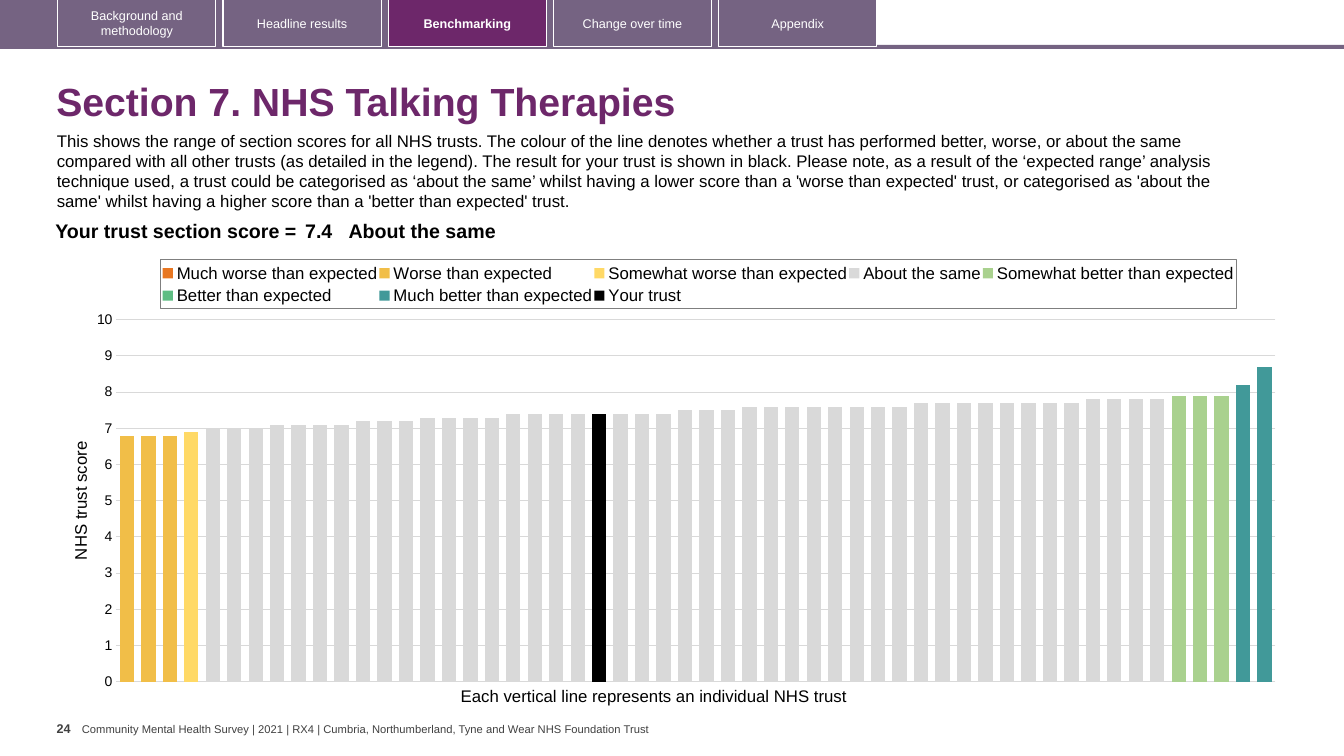
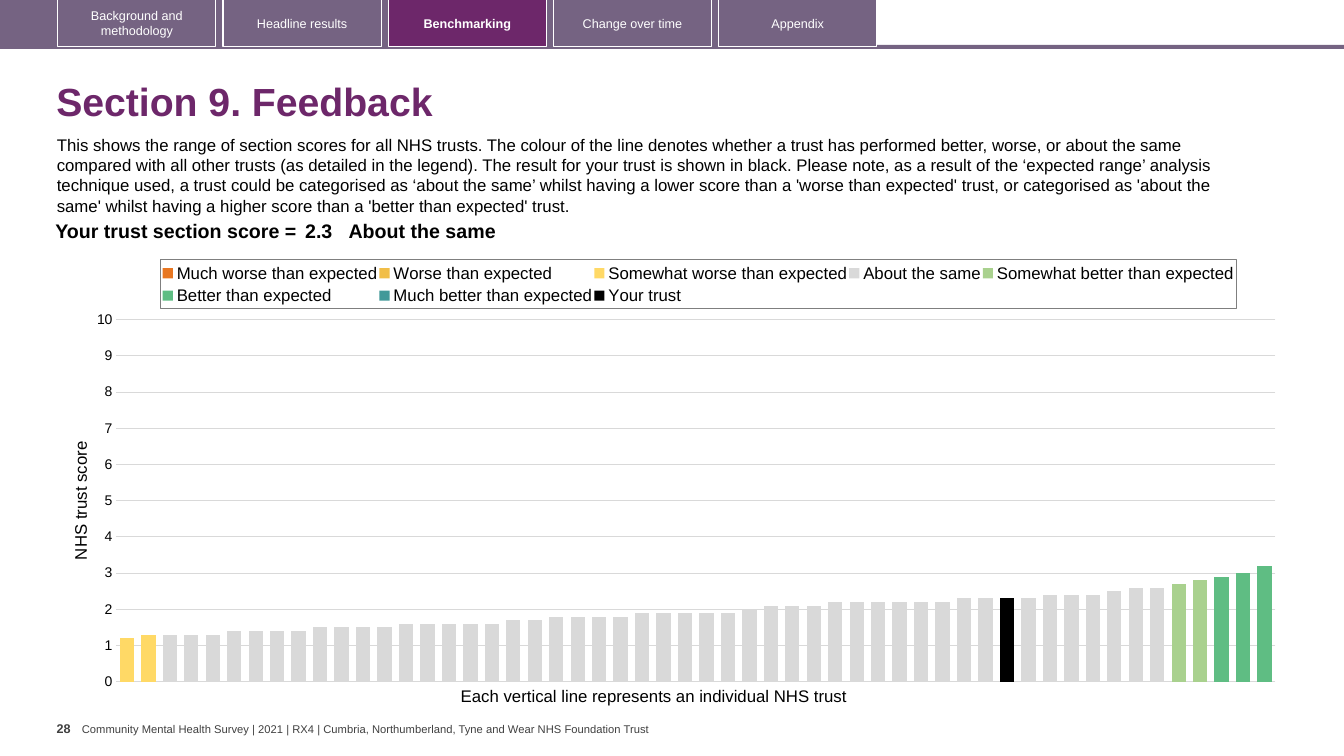
from copy import deepcopy
from dataclasses import dataclass

from pptx import Presentation
from pptx.chart.data import CategoryChartData
from pptx.dml.color import RGBColor
from pptx.enum.chart import XL_CHART_TYPE as Kind
from pptx.enum.chart import XL_LEGEND_POSITION as Place
from pptx.enum.chart import XL_TICK_MARK as Tick
from pptx.enum.shapes import MSO_SHAPE as Shape
from pptx.enum.text import MSO_ANCHOR as Anchor
from pptx.enum.text import PP_ALIGN as Align
from pptx.oxml import parse_xml
from pptx.oxml.ns import nsdecls
from pptx.util import Pt


@dataclass(frozen=True)
class Theme:
    font: str = "Arial"
    band: str = "756382"
    accent: str = "6D276A"
    white: str = "FFFFFF"
    black: str = "000000"
    grey: str = "404040"
    grid: str = "D9D9D9"
    frame: str = "7F7F7F"
    title: int = 28
    score: int = 14
    body: int = 12
    axis: int = 10
    tab: int = 9
    foot: int = 8


THEME = Theme()
TABS = ["Background and methodology", "Headline results", "Benchmarking",
        "Change over time", "Appendix"]
ACTIVE = "Benchmarking"
FOOTER = ("Community Mental Health Survey | 2021 | RX4 | "
          "Cumbria, Northumberland, Tyne and Wear NHS Foundation Trust")
INTRO = (
    "This shows the range of section scores for all NHS trusts. The colour of the line "
    "denotes whether a trust has performed better, worse, or about the same compared with "
    "all other trusts (as detailed in the legend). The result for your trust is shown in "
    "black. Please note, as a result of the ‘expected range’ analysis technique used, a "
    "trust could be categorised as ‘about the same’ whilst having a lower score than a "
    "'worse than expected' trust, or categorised as 'about the same' whilst having a "
    "higher score than a 'better than expected' trust.")
CAPTION = "Each vertical line represents an individual NHS trust"
AXIS = "NHS trust score"
LABEL = "Your trust section score ="
OWN = "Your trust"
BANDS = {
    "Much worse than expected": "E87722",
    "Worse than expected": "F1BE48",
    "Somewhat worse than expected": "FFD966",
    "About the same": "D9D9D9",
    "Somewhat better than expected": "A9D18E",
    "Better than expected": "5FBD83",
    "Much better than expected": "419999",
    OWN: THEME.black,
}
CHART = (48, 178, 875, 320)
PLOT = (35, 50.5, 828, 258.5)
LEGEND = (67, 7.7, 768, 35)
# Scores are (value, number of trusts), lowest first; own is (position, value).
PAGES = [
    {"title": "Section 7. NHS Talking Therapies", "page": "24", "top": 89.8,
     "score": "7.4", "result": "About the same", "own": (22, 7.4),
     "scores": {
         "Worse than expected": [(6.8, 3)],
         "Somewhat worse than expected": [(6.9, 1)],
         "About the same": [(7, 3), (7.1, 4), (7.2, 3), (7.3, 4), (7.4, 8),
                            (7.5, 3), (7.6, 8), (7.7, 8), (7.8, 4)],
         "Somewhat better than expected": [(7.9, 3)],
         "Much better than expected": [(8.2, 1), (8.7, 1)]}},
    {"title": "Section 9. Feedback", "page": "28", "top": 92.8,
     "score": "2.3", "result": "About the same", "own": (41, 2.3),
     "scores": {
         "Somewhat worse than expected": [(1.2, 1), (1.3, 1)],
         "About the same": [(1.3, 3), (1.4, 4), (1.5, 4), (1.6, 5), (1.7, 2),
                            (1.8, 4), (1.9, 5), (2, 1), (2.1, 3), (2.2, 6),
                            (2.3, 4), (2.4, 3), (2.5, 1), (2.6, 2)],
         "Somewhat better than expected": [(2.7, 1), (2.8, 1)],
         "Better than expected": [(2.9, 1), (3, 1), (3.2, 1)]}},
]


def rgb(code):
    return RGBColor.from_string(code)


def set_font(font, size, color=THEME.black, bold=False):
    font.name, font.size, font.bold = THEME.font, Pt(size), bold
    font.color.rgb = rgb(color)


def write(frame, text, size, color=THEME.black, bold=False, align=Align.LEFT):
    frame.text = text
    para = frame.paragraphs[0]
    para.alignment = align
    set_font(para.runs[0].font, size, color, bold)
    return para


def add_text(slide, box, text, size, color=THEME.black, bold=False, inset=7.2):
    shape = slide.shapes.add_textbox(*map(Pt, box))
    frame = shape.text_frame
    frame.word_wrap = True
    frame.margin_left = frame.margin_right = Pt(inset)
    write(frame, text, size, color, bold)
    return shape


def add_rect(slide, box, fill=None, line=None):
    shape = slide.shapes.add_shape(Shape.RECTANGLE, *map(Pt, box))
    shape.shadow.inherit = False
    if fill:
        shape.fill.solid()
        shape.fill.fore_color.rgb = rgb(fill)
    else:
        shape.fill.background()
    if line:
        shape.line.color.rgb = rgb(line)
        shape.line.width = Pt(0.75)
    else:
        shape.line.fill.background()
    return shape


def set_layout(layout, slide):
    """Draw the shared bands, tabs and footer, and move them to the layout."""
    for holder in list(layout.placeholders)[1:]:
        holder.element.getparent().remove(holder.element)
    head = layout.placeholders[0]
    head.left, head.top, head.width, head.height = map(Pt, (33, 48, 900, 52))
    parts = [add_rect(slide, (0, 32, 960, 3), THEME.band),
             add_rect(slide, (0, 0, 626, 34), THEME.band)]
    for i, name in enumerate(TABS):
        live = name == ACTIVE
        tab = add_rect(slide, (41.3 + 118 * i, -0.5, 113, 34),
                       THEME.accent if live else None, THEME.white)
        tab.text_frame.word_wrap = True
        tab.text_frame.vertical_anchor = Anchor.MIDDLE
        write(tab.text_frame, name, THEME.tab, THEME.white, live, Align.CENTER)
        parts.append(tab)
    parts.append(add_text(slide, (58.5, 512, 440, 17), FOOTER, THEME.foot,
                          THEME.grey, inset=0))
    parts[-1].text_frame.vertical_anchor = Anchor.MIDDLE
    for part in parts:
        layout.shapes.element.append(part.element)


def set_place(parent, index, box, inner=""):
    """Fix the place of a chart part, given in points within the chart."""
    for old in parent.xpath("c:layout"):
        parent.remove(old)
    modes = "".join(f'<c:{k}Mode val="edge"/>' for k in "xy")
    sizes = "".join(f'<c:{k} val="{v / full}"/>'
                    for k, v, full in zip("xywh", box, CHART[2:] * 2))
    parent.insert(index, parse_xml(
        f'<c:layout {nsdecls("c")}><c:manualLayout>{inner}{modes}{sizes}'
        '</c:manualLayout></c:layout>'))


def split_own(area):
    """Move the last series to a second, unlabelled axis on the right."""
    bars = area.xpath("c:barChart")[0]
    twin = deepcopy(bars)
    bars.remove(bars.xpath("c:ser")[-1])
    for ser in twin.xpath("c:ser")[:-1]:
        twin.remove(ser)
    bars.addnext(twin)
    cat, val = (deepcopy(area.xpath(f"c:{k}")[0]) for k in ("catAx", "valAx"))
    ids = {"1001": cat, "1002": val}
    for link, key in zip(twin.xpath("c:axId"), ids):
        link.set("val", key)
    for (key, axis), cross in zip(ids.items(), reversed(list(ids))):
        axis.xpath("c:axId")[0].set("val", key)
        axis.xpath("c:crossAx")[0].set("val", cross)
    for part in val.xpath("c:majorGridlines | c:title"):
        val.remove(part)
    val.xpath("c:axPos")[0].set("val", "r")
    val.xpath("c:tickLblPos")[0].set("val", "none")
    val.xpath("c:crosses")[0].set("val", "max")
    area.xpath("c:valAx")[-1].addnext(val)
    val.addnext(cat)


def fill_data(page):
    bars = [(band, value) for band, runs in page["scores"].items()
            for value, count in runs for _ in range(count)]
    data = CategoryChartData()
    data.categories = [str(i + 1) for i in range(len(bars))]
    spot, score = page["own"]
    for name in BANDS:
        if name == OWN:
            vals = [score if i == spot else None for i in range(len(bars))]
        else:
            vals = [value if band == name else None for band, value in bars]
        data.add_series(name, vals)
    return data


def add_scores(slide, page):
    chart = slide.shapes.add_chart(Kind.COLUMN_CLUSTERED, *map(Pt, CHART),
                                   fill_data(page)).chart
    set_font(chart.font, THEME.axis)
    chart.has_title = False
    plot = chart.plots[0]
    plot.gap_width, plot.overlap, plot.vary_by_categories = 50, 100, False
    for series in plot.series:
        series.format.fill.solid()
        series.format.fill.fore_color.rgb = rgb(BANDS[series.name])

    chart.category_axis.visible = False
    axis = chart.value_axis
    axis.minimum_scale, axis.maximum_scale, axis.major_unit = 0, 10, 1
    axis.major_tick_mark = axis.minor_tick_mark = Tick.NONE
    axis.format.line.fill.background()
    grid = axis.major_gridlines.format.line
    grid.color.rgb, grid.width = rgb(THEME.grid), Pt(0.75)
    set_font(axis.tick_labels.font, THEME.axis)
    write(axis.axis_title.text_frame, AXIS, THEME.body, align=Align.CENTER)

    chart.has_legend = True
    legend = chart.legend
    legend.position, legend.include_in_layout = Place.TOP, False
    set_font(legend.font, THEME.body)
    key = chart.element.xpath("//c:legend")[0]
    set_place(key, 1, LEGEND)
    key.xpath("c:overlay")[0].addnext(parse_xml(
        f'<c:spPr {nsdecls("c", "a")}><a:ln w="9525"><a:solidFill>'
        f'<a:srgbClr val="{THEME.frame}"/></a:solidFill></a:ln></c:spPr>'))
    area = chart.element.xpath("//c:plotArea")[0]
    set_place(area, 0, PLOT, '<c:layoutTarget val="inner"/>')
    split_own(area)


def add_result(slide, page):
    cells = [(LABEL, 189, 3, Align.RIGHT), (page["score"], 34, 3, Align.LEFT),
             (page["result"], 619, 0, Align.LEFT)]
    table = slide.shapes.add_table(1, len(cells), Pt(26), Pt(155), Pt(842), Pt(22)).table
    table.first_row = table.horz_banding = False
    for i, (text, width, inset, align) in enumerate(cells):
        table.columns[i].width = Pt(width)
        cell = table.cell(0, i)
        cell.fill.background()
        cell.margin_left = cell.margin_right = Pt(inset)
        cell.margin_top = cell.margin_bottom = Pt(3)
        write(cell.text_frame, text, THEME.score, bold=True, align=align)


def add_page(slide, page):
    head = slide.shapes.title.text_frame
    head.word_wrap = True
    head.vertical_anchor = Anchor.MIDDLE
    write(head, page["title"], THEME.title, THEME.accent, True).line_spacing = 0.9
    add_text(slide, (40.5, 511.5, 18, 28), page["page"], THEME.tab, THEME.grey, True, 0)
    add_text(slide, (33.5, page["top"], 873, 66), INTRO, THEME.body)
    add_text(slide, (322, 486, 300, 22), CAPTION, THEME.body)
    add_scores(slide, page)
    add_result(slide, page)


def main():
    deck = Presentation()
    deck.slide_width, deck.slide_height = Pt(960), Pt(540)
    layout = deck.slide_layouts[5]
    slides = [deck.slides.add_slide(layout) for _ in PAGES]
    set_layout(layout, slides[0])
    for slide, page in zip(slides, PAGES):
        add_page(slide, page)
    deck.save("out.pptx")


if __name__ == "__main__":
    main()
